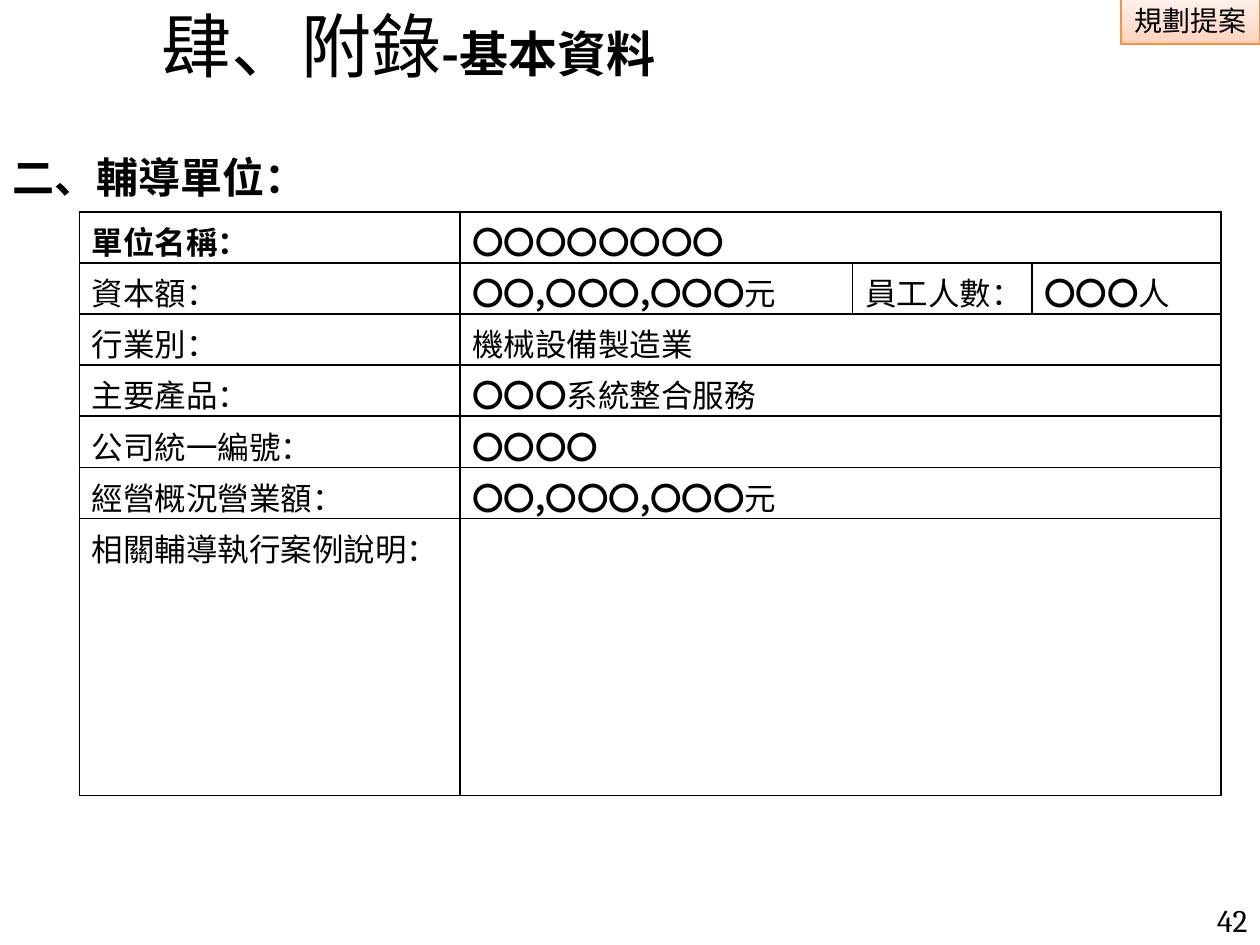
from lxml.etree import SubElement
from pptx import Presentation
from pptx.dml.color import RGBColor
from pptx.enum.shapes import MSO_SHAPE
from pptx.enum.text import MSO_ANCHOR, PP_ALIGN
from pptx.oxml.ns import qn
from pptx.util import Cm, Pt

CJK = "Noto Sans CJK SC"
BLACK = "000000"
COLUMNS = (7.67, 7.92, 3.61, 3.81)
ROW_HEIGHT, CASES_HEIGHT = 1.03, 5.59

# Each row lists its cells; a cell is a list of (text, bold) runs
AMOUNT = [("〇〇,〇〇〇,〇〇〇", True), ("元", False)]
ROWS = [
    [[("單位名稱：", True)], [("〇〇〇〇〇〇〇〇", True)]],
    [[("資本額：", False)], AMOUNT, [("員工人數：", False)],
     [("〇〇〇", True), ("人", False)]],
    [[("行業別：", False)], [("機械設備製造業", False)]],
    [[("主要產品：", False)], [("〇〇〇", True), ("系統整合服務", False)]],
    [[("公司統一編號：", False)], [("〇〇〇〇", True)]],
    [[("經營概況營業額：", False)], AMOUNT],
    [[("相關輔導執行案例說明：", False)], []],
]


def color(hex_string):
    return RGBColor.from_string(hex_string)


def set_font(font, size, bold=False, name=CJK):
    font.size, font.bold, font.name = Pt(size), bold, name
    font.color.rgb = color(BLACK)
    # East Asian text takes its typeface from a:ea, right after a:latin
    latin = font._rPr.find(qn("a:latin"))
    east_asian = SubElement(font._rPr, qn("a:ea"), typeface=name)
    latin.addnext(east_asian)


def place(shape, left, top, width, height):
    shape.left, shape.top = Cm(left), Cm(top)
    shape.width, shape.height = Cm(width), Cm(height)


def add_title(slide, left, top, width, height):
    title = slide.shapes.title
    place(title, left, top, width, height)
    title.text_frame.vertical_anchor = MSO_ANCHOR.MIDDLE
    heading = title.text_frame.paragraphs[0]
    heading.alignment = PP_ALIGN.LEFT
    for text, size, bold in (("肆、附錄", 40, False), ("-基本資料", 28, True)):
        run = heading.add_run()
        run.text = text
        set_font(run.font, size, bold)


def add_proposal_tag(slide, left, top, width, height):
    tag = slide.shapes.add_shape(MSO_SHAPE.RECTANGLE, Cm(left), Cm(top),
                                 Cm(width), Cm(height))
    tag.shadow.inherit = False
    tag.fill.gradient()
    tag.fill.gradient_angle = 90
    for stop, shade in zip(tag.fill.gradient_stops, ("FFD2BD", "FFF2ED")):
        stop.color.rgb = color(shade)
    tag.line.color.rgb = color("F69240")
    tag.line.width = Pt(0.75)
    tag.text_frame.word_wrap = False
    label = tag.text_frame.paragraphs[0]
    label.text = "規劃提案"
    label.alignment = PP_ALIGN.CENTER
    set_font(label.font, 16)


def add_text(slide, left, top, width, height, text, size, bold=False, name=CJK,
             align=PP_ALIGN.LEFT, anchor=MSO_ANCHOR.TOP):
    frame = slide.shapes.add_textbox(Cm(left), Cm(top), Cm(width),
                                     Cm(height)).text_frame
    frame.word_wrap = True
    frame.vertical_anchor = anchor
    paragraph = frame.paragraphs[0]
    paragraph.text = text
    paragraph.alignment = align
    set_font(paragraph.font, size, bold, name)


def format_cell(cell):
    cell_properties = cell._tc.get_or_add_tcPr()
    for side in ("a:lnL", "a:lnR", "a:lnT", "a:lnB"):
        border = SubElement(cell_properties, qn(side), w=str(Pt(1)))
        solid = SubElement(border, qn("a:solidFill"))
        SubElement(solid, qn("a:srgbClr"), val=BLACK)
    cell.fill.background()
    cell.margin_bottom = 0


def add_unit_table(slide, left, top):
    heights = [ROW_HEIGHT] * (len(ROWS) - 1) + [CASES_HEIGHT]
    table = slide.shapes.add_table(
        len(ROWS), len(COLUMNS), Cm(left), Cm(top),
        Cm(sum(COLUMNS)), Cm(sum(heights))).table
    table.first_row = table.horz_banding = False
    for column, width in zip(table.columns, COLUMNS):
        column.width = Cm(width)
    for r, (cells, height) in enumerate(zip(ROWS, heights)):
        table.rows[r].height = Cm(height)
        for c in range(len(COLUMNS)):
            format_cell(table.cell(r, c))
        # A lone value spans the remaining columns
        if len(cells) == 2:
            table.cell(r, 1).merge(table.cell(r, len(COLUMNS) - 1))
        for c, runs in enumerate(cells):
            paragraph = table.cell(r, c).text_frame.paragraphs[0]
            set_font(paragraph.font, 18)
            for text, bold in runs:
                run = paragraph.add_run()
                run.text = text
                run.font.bold = bold


def main():
    presentation = Presentation()
    presentation.slide_width, presentation.slide_height = Cm(25.4), Cm(19.05)
    slide = presentation.slides.add_slide(presentation.slide_layouts[5])
    add_proposal_tag(slide, 22.6, -0.05, 2.8, 0.94)
    # Page number
    add_text(slide, 23.22, 18.06, 2.18, 0.99, "42", 18, name="Cambria",
             align=PP_ALIGN.RIGHT, anchor=MSO_ANCHOR.MIDDLE)
    add_title(slide, 3, 0.08, 12.7, 1.65)
    # Section heading
    add_text(slide, 0, 2.92, 25.3, 4.7, "二、輔導單位：", 24, bold=True)
    add_unit_table(slide, 1.6, 4.27)
    presentation.save("out.pptx")


if __name__ == "__main__":
    main()
